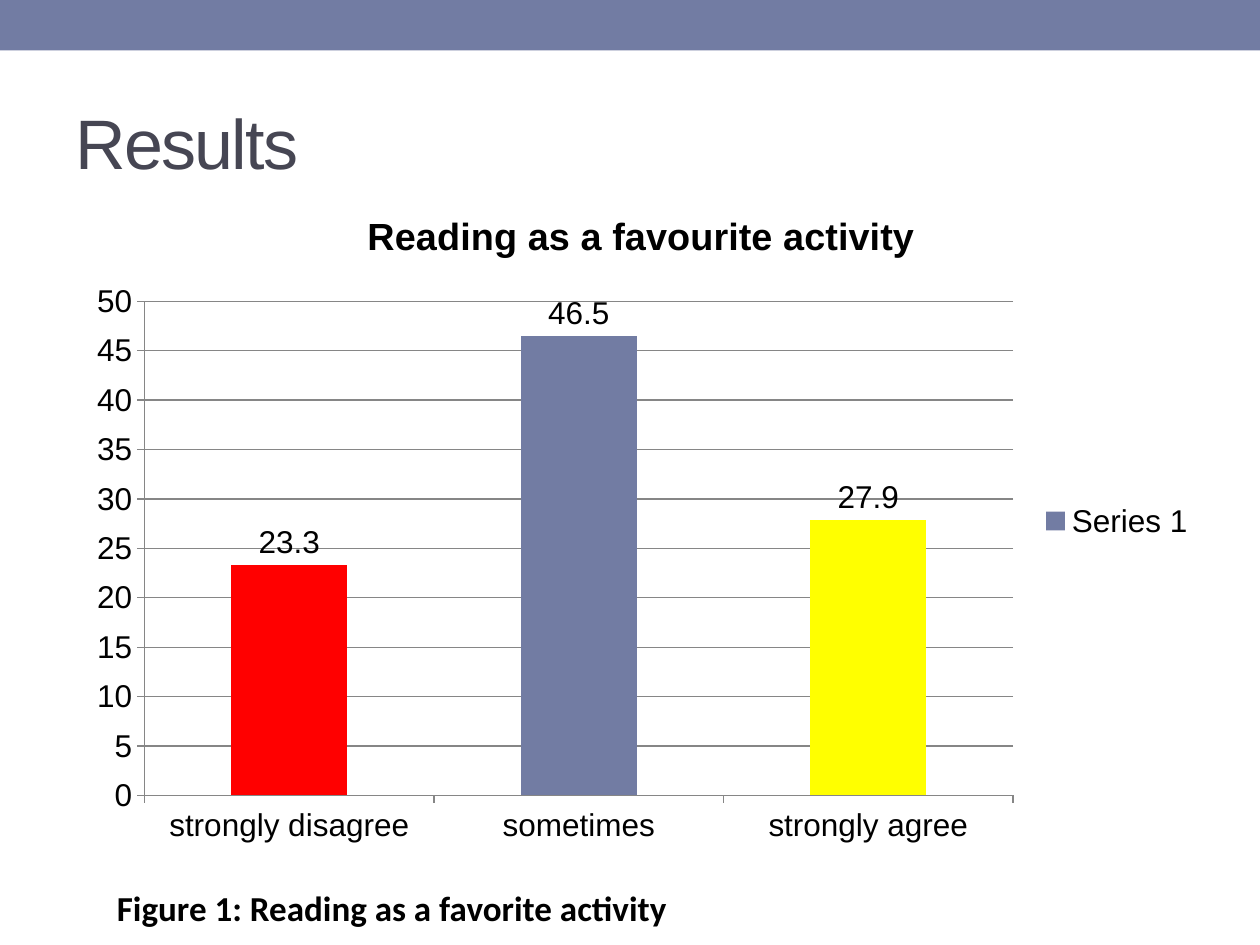
import dataclasses

import pptx
import pptx.chart.data
import pptx.dml.color
import pptx.enum.chart
import pptx.enum.shapes
import pptx.enum.text
import pptx.util

Pt = pptx.util.Pt
RGBColor = pptx.dml.color.RGBColor

SLATE = RGBColor(0x72, 0x7C, 0xA3)
DARK = RGBColor(0x46, 0x46, 0x53)
BLACK = RGBColor(0, 0, 0)
GREY = RGBColor(0x86, 0x86, 0x86)
RED = RGBColor(0xFF, 0, 0)
YELLOW = RGBColor(0xFF, 0xFF, 0)


@dataclasses.dataclass(frozen=True)
class Label:
    text: str
    left: float
    top: float
    width: float
    height: float
    size: float
    font: str
    color: RGBColor
    bold: bool = False
    track: int = 0  # hundredths of a point


@dataclasses.dataclass(frozen=True)
class Bar:
    name: str
    value: float
    color: RGBColor


LABELS = (
    Label("Results", 36, 41.76, 648, 77.76, 40, "Arial", DARK, track=-100),
    Label("Figure 1: Reading as a favorite activity",
          59.76, 502.56, 357.12, 31.68, 20, "Calibri", BLACK, bold=True),
)
BARS = (
    Bar("strongly disagree", 23.3, RED),
    Bar("sometimes", 46.5, SLATE),
    Bar("strongly agree", 27.9, YELLOW),
)


def add_label(slide, label: Label) -> None:
    box = slide.shapes.add_textbox(Pt(label.left), Pt(label.top),
                                   Pt(label.width), Pt(label.height))
    frame = box.text_frame
    frame.word_wrap = True
    frame.vertical_anchor = pptx.enum.text.MSO_ANCHOR.MIDDLE
    frame.text = label.text
    run = frame.paragraphs[0].runs[0]
    run.font.size = Pt(label.size)
    run.font.name = label.font
    run.font.bold = label.bold
    run.font.color.rgb = label.color
    if label.track:
        run._r.get_or_add_rPr().set("spc", str(label.track))


def style_line(line) -> None:
    line.color.rgb = GREY
    line.width = Pt(0.75)


def add_bars(slide, bars: tuple[Bar, ...]) -> None:
    kinds = pptx.enum.chart
    data = pptx.chart.data.CategoryChartData()
    data.categories = [bar.name for bar in bars]
    data.add_series("Series 1", [bar.value for bar in bars])
    chart = slide.shapes.add_chart(
        kinds.XL_CHART_TYPE.COLUMN_CLUSTERED,
        Pt(42.48), Pt(105.84), Pt(648), Pt(383.76), data).chart
    chart.font.size = Pt(18)
    chart.font.name = "Arial"
    chart.font.color.rgb = BLACK

    # Title and legend
    chart.has_title = True
    title = chart.chart_title.text_frame
    title.text = "Reading as a favourite activity"
    font = title.paragraphs[0].runs[0].font
    font.size = Pt(21.6)
    font.name = "Arial"
    font.bold = True
    font.color.rgb = BLACK
    chart.has_legend = True
    chart.legend.position = kinds.XL_LEGEND_POSITION.RIGHT
    chart.legend.include_in_layout = False

    # Axes
    for axis in (chart.category_axis, chart.value_axis):
        axis.major_tick_mark = kinds.XL_TICK_MARK.OUTSIDE
        style_line(axis.format.line)
    scale = chart.value_axis
    scale.minimum_scale, scale.maximum_scale, scale.major_unit = 0, 50, 5
    scale.has_major_gridlines = True
    style_line(scale.major_gridlines.format.line)

    # Bars and their values
    plot = chart.plots[0]
    plot.gap_width = 150
    plot.vary_by_categories = False
    series = plot.series[0]
    series.format.fill.solid()
    series.format.fill.fore_color.rgb = SLATE
    for place, bar in enumerate(bars):
        if bar.color != SLATE:
            fill = series.points[place].format.fill
            fill.solid()
            fill.fore_color.rgb = bar.color
    series.data_labels.show_value = True
    series.data_labels.position = kinds.XL_LABEL_POSITION.OUTSIDE_END


def main() -> None:
    deck = pptx.Presentation()
    deck.slide_width, deck.slide_height = Pt(720), Pt(540)
    slide = deck.slides.add_slide(deck.slide_layouts[6])

    # Top band
    band = slide.shapes.add_shape(pptx.enum.shapes.MSO_SHAPE.RECTANGLE,
                                  Pt(0), Pt(0), Pt(720), Pt(28.8))
    band.shadow.inherit = False
    band.fill.solid()
    band.fill.fore_color.rgb = SLATE
    band.line.fill.background()

    # Chart, heading and caption
    add_bars(slide, BARS)
    for label in LABELS:
        add_label(slide, label)
    deck.save("out.pptx")


if __name__ == "__main__":
    main()
